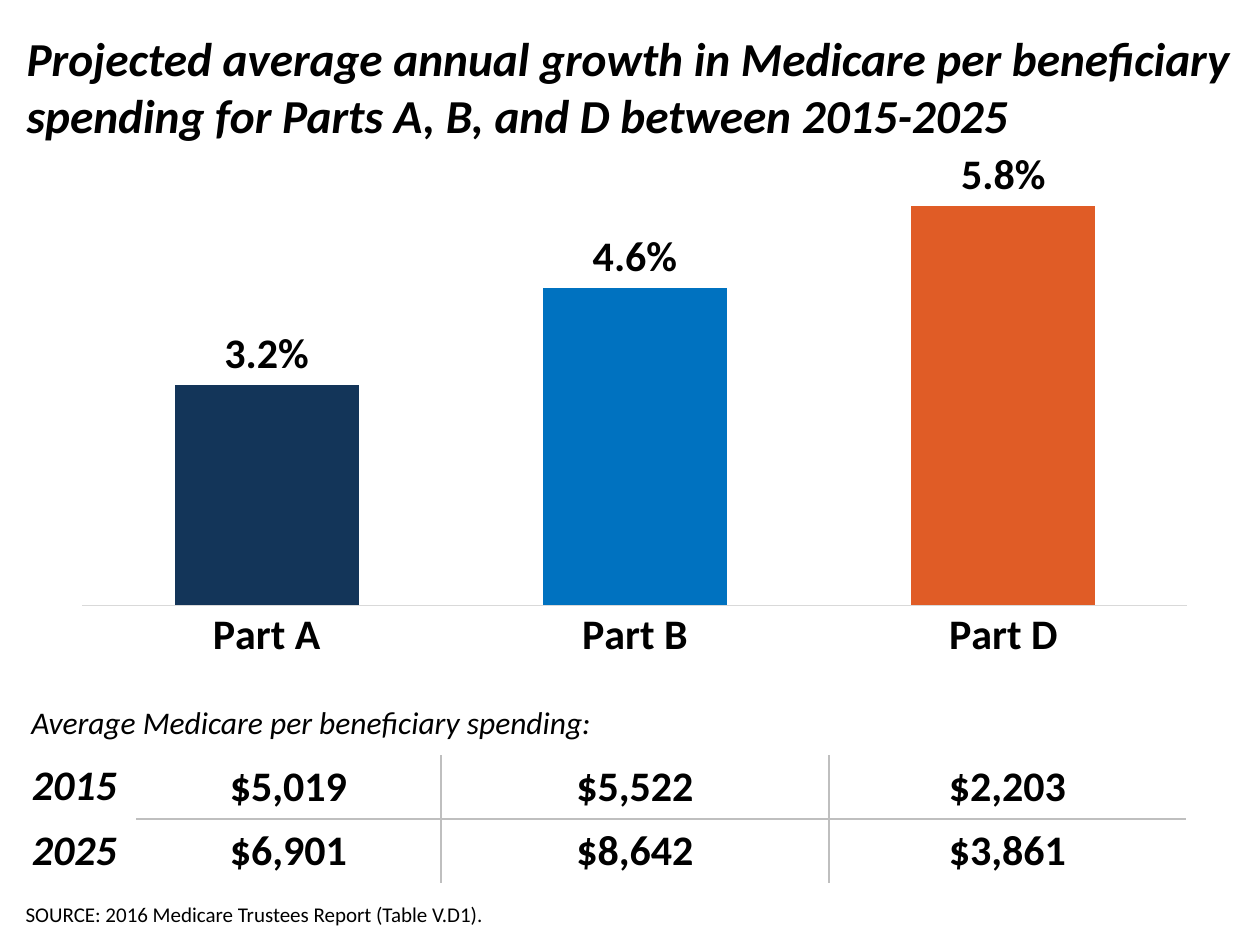
"""Build the slide on projected Medicare spending growth per beneficiary."""
from dataclasses import dataclass
from typing import Any

from pptx import Presentation
from pptx import util as u
from pptx.chart.data import CategoryChartData
from pptx.dml.color import RGBColor
from pptx.enum import chart as charts, text
from pptx.oxml import parse_xml
from pptx.oxml.ns import nsdecls, qn

SCALE = 914400 / 126


@dataclass(frozen=True)
class Theme:
    font: str = "Calibri"
    ink: str = "000000"
    rule: str = "BFBFBF"
    axis: str = "D9D9D9"
    bars: tuple[str, ...] = ("133559", "0072C0", "E05C26")
    title: int = 27
    main: int = 24
    note: int = 18
    source: int = 12


@dataclass(frozen=True)
class Box:
    left: int
    top: int
    width: int
    height: int

    def emu(self) -> tuple[int, ...]:
        return tuple(px(value) for value in (self.left, self.top, self.width, self.height))


@dataclass(frozen=True)
class TextBlock:
    wording: str
    box: Box
    size: int
    bold: bool = False
    italic: bool = False
    anchor: text.MSO_ANCHOR = text.MSO_ANCHOR.TOP


@dataclass(frozen=True)
class Grid:
    box: Box
    columns: tuple[int, ...]
    rows: tuple[tuple[str, ...], ...]
    italic: bool = False
    ruled: bool = False


THEME = Theme()
TITLE = TextBlock(
    "Projected average annual growth in Medicare per beneficiary spending "
    "for Parts A, B, and D between 2015-2025",
    Box(14, 23, 1235, 127), THEME.title, bold=True, italic=True)
SOURCE = TextBlock("SOURCE: 2016 Medicare Trustees Report (Table V.D1).",
                   Box(13, 857, 1147, 76), THEME.source, anchor=text.MSO_ANCHOR.BOTTOM)
CAPTION = TextBlock("Average Medicare per beneficiary spending:",
                    Box(19, 697, 737, 50), THEME.note, italic=True)
GRIDS = (
    Grid(Box(136, 755, 1050, 126), (305, 388, 357),
         (("$5,019", "$5,522", "$2,203"), ("$6,901", "$8,642", "$3,861")), ruled=True),
    Grid(Box(18, 754, 113, 130), (113,), (("2015",), ("2025",)), italic=True),
)
CHART_BOX = Box(63, -10, 1144, 683)
GROWTH = {"Part A": 0.032, "Part B": 0.046, "Part D": 0.058}
PLOT = {"x": 0.017, "y": 0.195, "w": 0.966, "h": 0.706}


def px(value: int) -> int:
    return round(value * SCALE)


def assign(target: Any, values: dict[str, Any]) -> None:
    for name, value in values.items():
        setattr(target, name, value)


def style_font(font: Any, size: int, bold: bool = False, italic: bool = False) -> None:
    assign(font, {"name": THEME.font, "size": u.Pt(size), "bold": bold, "italic": italic})
    font.color.rgb = RGBColor.from_string(THEME.ink)


def write_block(shape: Any, block: TextBlock) -> None:
    assign(shape, dict(zip(("left", "top", "width", "height"), block.box.emu())))
    frame = shape.text_frame
    assign(frame, {"text": block.wording, "word_wrap": True,
                   "auto_size": text.MSO_AUTO_SIZE.NONE, "vertical_anchor": block.anchor})
    paragraph = frame.paragraphs[0]
    properties = paragraph._p.get_or_add_pPr()
    assign(paragraph, {"alignment": text.PP_ALIGN.LEFT, "space_before": u.Pt(0)})
    for name in ("marL", "indent"):
        properties.set(name, "0")
    properties.append(parse_xml(f"<a:buNone {nsdecls('a')}/>"))
    style_font(paragraph.font, block.size, block.bold, block.italic)


def rule_cell(cell: Any, sides: dict[str, bool]) -> None:
    properties = cell._tc.get_or_add_tcPr()
    for index, (side, shown) in enumerate(sides.items()):
        fill = (f'<a:solidFill><a:srgbClr val="{THEME.rule}"/></a:solidFill>'
                if shown else "<a:noFill/>")
        properties.insert(index, parse_xml(
            f'<a:ln{side} {nsdecls("a")} w="{u.Pt(1)}">{fill}</a:ln{side}>'))


def draw_grid(slide: Any, grid: Grid) -> None:
    row_count, column_count = len(grid.rows), len(grid.columns)
    table = slide.shapes.add_table(row_count, column_count, *grid.box.emu()).table
    assign(table, {"first_row": False, "horz_banding": False})
    for column, width in zip(table.columns, grid.columns):
        column.width = px(width)
    for row_index, row in enumerate(grid.rows):
        table.rows[row_index].height = px(grid.box.height // row_count)
        for column_index, wording in enumerate(row):
            cell = table.cell(row_index, column_index)
            cell.text = wording
            cell.fill.background()
            rule_cell(cell, {
                "L": grid.ruled and column_index > 0,
                "R": grid.ruled and column_index < column_count - 1,
                "T": grid.ruled and row_index > 0,
                "B": grid.ruled and row_index < row_count - 1,
            })
            paragraph = cell.text_frame.paragraphs[0]
            paragraph.alignment = text.PP_ALIGN.CENTER
            style_font(paragraph.font, THEME.main, True, grid.italic)


def place_plot(chart: Any) -> None:
    modes = '<c:layoutTarget val="inner"/><c:xMode val="edge"/><c:yMode val="edge"/>'
    sizes = "".join(f'<c:{name} val="{value}"/>' for name, value in PLOT.items())
    body = chart.element.find(qn("c:chart"))
    body.find(qn("c:plotArea")).insert(0, parse_xml(
        f"<c:layout {nsdecls('c')}><c:manualLayout>{modes}{sizes}</c:manualLayout></c:layout>"))
    body.addnext(parse_xml(
        f"<c:spPr {nsdecls('c', 'a')}><a:noFill/><a:ln><a:noFill/></a:ln></c:spPr>"))


def draw_chart(slide: Any) -> None:
    chart_data = CategoryChartData(number_format="0.0%")
    chart_data.categories = list(GROWTH)
    chart_data.add_series("Series 1", list(GROWTH.values()))
    chart = slide.shapes.add_chart(
        charts.XL_CHART_TYPE.COLUMN_CLUSTERED, *CHART_BOX.emu(), chart_data).chart
    assign(chart, {"has_title": False, "has_legend": False})
    style_font(chart.font, THEME.main, bold=True)
    place_plot(chart)
    assign(chart.value_axis, {"visible": False, "has_major_gridlines": False,
                              "minimum_scale": 0, "maximum_scale": 0.07})
    axis = chart.category_axis
    axis.major_tick_mark = charts.XL_TICK_MARK.NONE
    style_font(axis.tick_labels.font, THEME.main, bold=True)
    axis.format.line.width = u.Pt(0.75)
    axis.format.line.color.rgb = RGBColor.from_string(THEME.axis)
    plot = chart.plots[0]
    assign(plot, {"gap_width": 100, "overlap": -27, "vary_by_categories": False,
                  "has_data_labels": True})
    assign(plot.data_labels, {"show_value": True, "number_format": "0.0%",
                              "number_format_is_linked": False,
                              "position": charts.XL_LABEL_POSITION.OUTSIDE_END})
    style_font(plot.data_labels.font, THEME.main, bold=True)
    for index, colour in enumerate(THEME.bars):
        fill = plot.series[0].points[index].format.fill
        fill.solid()
        fill.fore_color.rgb = RGBColor.from_string(colour)


def main() -> None:
    presentation = Presentation()
    assign(presentation, {"slide_width": px(1260), "slide_height": px(945)})
    slide = presentation.slides.add_slide(presentation.slide_layouts[1])
    write_block(slide.shapes.title, TITLE)
    write_block(slide.placeholders[1], SOURCE)
    for grid in GRIDS:
        draw_grid(slide, grid)
    draw_chart(slide)
    write_block(slide.shapes.add_textbox(*CAPTION.box.emu()), CAPTION)
    presentation.save("out.pptx")


if __name__ == "__main__":
    main()
